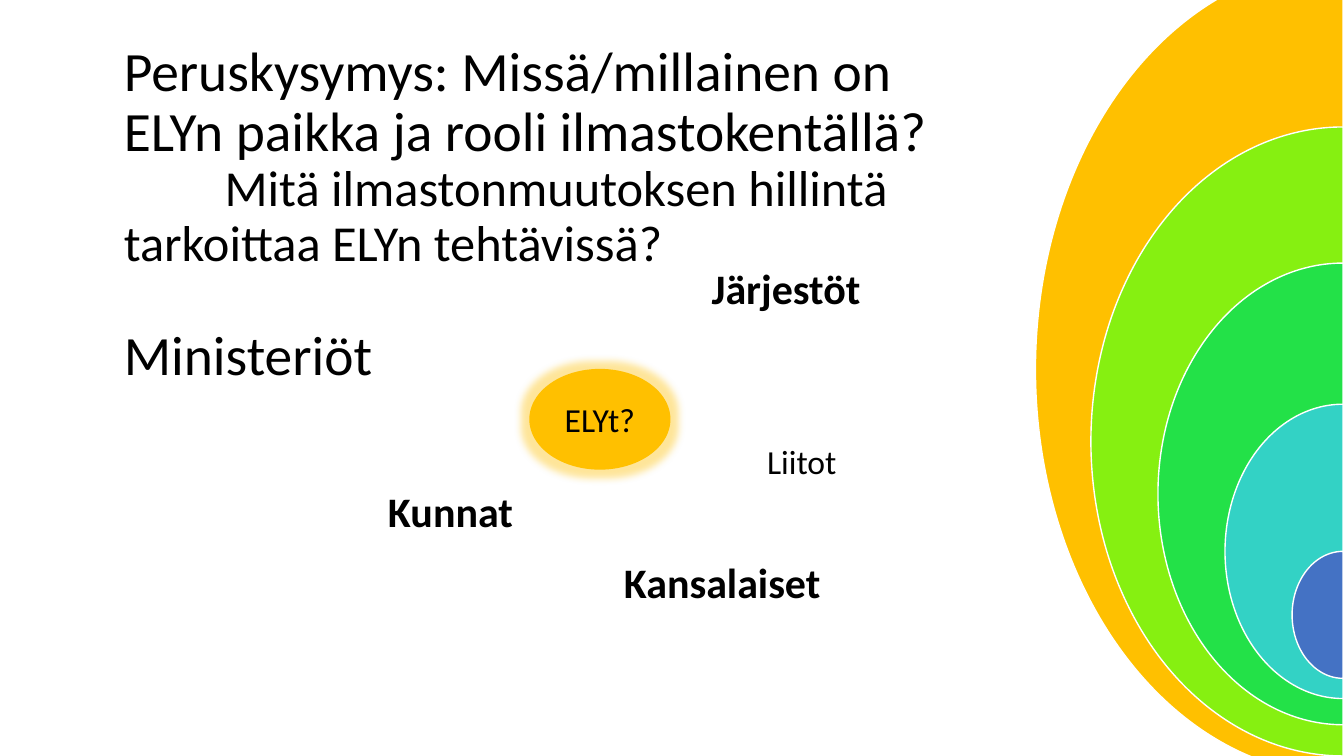
"""Build the slide on the role of ELY centres in the climate field."""
from lxml.etree import SubElement
from pptx import Presentation
from pptx.dml.color import RGBColor
from pptx.enum.shapes import MSO_SHAPE
from pptx.enum.text import MSO_ANCHOR, PP_ALIGN
from pptx.oxml.ns import qn
from pptx.util import Inches, Pt

MID = 13.32
RINGS = [
    (6.1, 8.05, -0.36, "FFC000"),
    (5, 6.24, 1.26, "86F011"),
    (3.67, 4.58, 2.61, "23E148"),
    (2.34, 2.92, 4.01, "33D2C5"),
    (1.01, 1.26, 5.47, "4472C4"),
]
TITLE = [
    ("Peruskysymys: Missä/millainen on ELYn paikka ja rooli ilmastokentällä?", 39.6, 0, 0),
    ("Mitä ilmastonmuutoksen hillintä tarkoittaa ELYn tehtävissä?", 36, 1, 0),
    ("Ministeriöt", 39.6, 0, 39.5),
]
LABELS = [
    ("Kunnat", (3.75, 4.77, 1.5, 0.61), 30, True),
    ("Kansalaiset", (6.09, 5.47, 3.74, 0.61), 30, True),
    ("Liitot", (7.51, 4.33, 1.8, 0.5), 24, False),
    ("Järjestöt", (6.96, 2.56, 2, 0.61), 30, True),
]
CORE = ("ELYt?", (5.25, 3.66, 1.4, 1), 24, "FFC000")


def color(code):
    return RGBColor.from_string(code)


def place(box):
    return [Inches(n) for n in box]


def write(para, text, size, bold=False):
    run = para.add_run()
    run.text = text
    style = {"name": "Calibri", "size": Pt(size), "bold": bold}
    for key, value in style.items():
        setattr(run.font, key, value)
    run.font.color.rgb = color("000000")


def add_form(slide, kind, box, fill):
    form = slide.shapes.add_shape(kind, *place(box))
    form.shadow.inherit = False
    form.fill.solid()
    form.fill.fore_color.rgb = color(fill)
    return form


def add_text(slide, box):
    frame = slide.shapes.add_textbox(*place(box)).text_frame
    frame.word_wrap = True
    return frame


def add_rings(slide):
    for width, height, top, fill in RINGS:
        ring = add_form(slide, MSO_SHAPE.PIE, (MID - width / 2, top, width, height), fill)
        ring.adjustments[0], ring.adjustments[1] = 54, 162
        ring.line.color.rgb = color("FFFFFF")
        ring.line.width = Pt(1)


def add_title(slide):
    frame = add_text(slide, (1.13, 1.59, 8.83, 1.09))
    frame.vertical_anchor = MSO_ANCHOR.MIDDLE
    for num, (text, size, indent, gap) in enumerate(TITLE):
        para = frame.add_paragraph() if num else frame.paragraphs[0]
        para.line_spacing = 0.9
        if gap:
            para.space_before = Pt(gap)
        if indent:
            para._p.get_or_add_pPr().set("indent", str(Inches(indent)))
        write(para, text, size)


def add_core(slide):
    text, box, size, fill = CORE
    core = add_form(slide, MSO_SHAPE.OVAL, box, fill)
    core.line.fill.background()
    effects = core._element.spPr.find(qn("a:effectLst"))
    glow = SubElement(effects, qn("a:glow"), rad=str(Pt(11)))
    tint = SubElement(glow, qn("a:srgbClr"), val=fill)
    SubElement(tint, qn("a:alpha"), val="40000")
    frame = core.text_frame
    frame.vertical_anchor = MSO_ANCHOR.MIDDLE
    para = frame.paragraphs[0]
    para.alignment = PP_ALIGN.CENTER
    write(para, text, size)


def main():
    deck = Presentation()
    deck.slide_width, deck.slide_height = place((13.33, 7.5))
    slide = deck.slides.add_slide(deck.slide_layouts[6])
    add_rings(slide)
    add_title(slide)
    for text, box, size, bold in LABELS:
        write(add_text(slide, box).paragraphs[0], text, size, bold)
    add_core(slide)
    deck.save("out.pptx")


if __name__ == "__main__":
    main()
